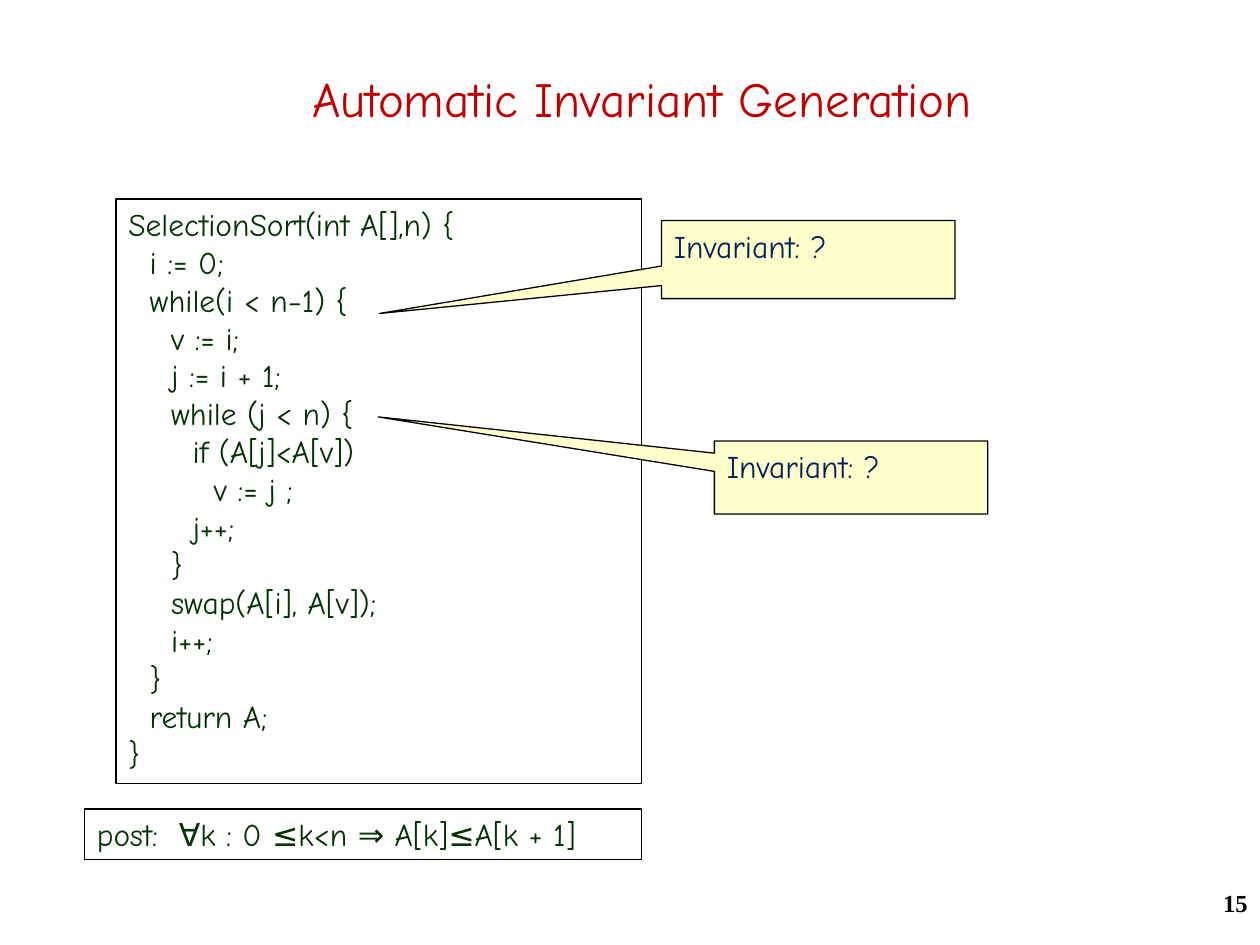
import pptx
import pptx.util
import pptx.dml.color
import pptx.enum.shapes
import pptx.enum.text

Inches = pptx.util.Inches
RGBColor = pptx.dml.color.RGBColor
SHAPE = pptx.enum.shapes.MSO_SHAPE
ALIGN = pptx.enum.text.PP_ALIGN
ANCHOR = pptx.enum.text.MSO_ANCHOR

RED = RGBColor(0xC0, 0x00, 0x00)
GREEN = RGBColor(0x00, 0x33, 0x00)
NAVY = RGBColor(0x00, 0x20, 0x60)
BLACK = RGBColor(0x00, 0x00, 0x00)
CREAM = RGBColor(0xFF, 0xFF, 0xCC)

INDENT = Inches(0.17)

deck = pptx.Presentation()
deck.slide_width, deck.slide_height = Inches(10), Inches(7.5)
page = deck.slides.add_slide(deck.slide_layouts[6])


def write(box, text, size, color, align=ALIGN.LEFT, anchor=ANCHOR.TOP,
          font="Comic Neue", bold=False):
    frame = box.text_frame
    frame.word_wrap = True
    frame.vertical_anchor = anchor
    frame.text = text
    for para in frame.paragraphs:
        para.alignment = align
        for span in para.runs:
            span.font.name = font
            span.font.size = pptx.util.Pt(size)
            span.font.bold = bold
            span.font.color.rgb = color


def add_outlined(kind, left, top, width, height, fill=None):
    box = page.shapes.add_shape(kind, Inches(left), Inches(top), Inches(width), Inches(height))
    box.shadow.inherit = False
    box.line.color.rgb = BLACK
    box.line.width = pptx.util.Pt(0.75)
    if fill is None:
        box.fill.background()
    else:
        box.fill.solid()
        box.fill.fore_color.rgb = fill
    return box


# Title
title = page.shapes.add_textbox(Inches(0.19), Inches(0.18), Inches(9.81), Inches(1.2))
write(title, "Automatic Invariant Generation", 28, RED, ALIGN.CENTER, ANCHOR.MIDDLE)

# Program listing: nesting depth and statement
code_lines = [
    (0, "SelectionSort(int A[],n) {"),
    (1, "i := 0;"),
    (1, "while(i < n−1) {"),
    (2, "v := i;"),
    (2, "j := i + 1;"),
    (2, "while (j < n) {"),
    (3, "if (A[j]<A[v])"),
    (4, "v := j ;"),
    (3, "j++;"),
    (2, "}"),
    (2, "swap(A[i], A[v]);"),
    (2, "i++;"),
    (1, "}"),
    (1, "return A;"),
    (0, "}"),
]
listing = add_outlined(SHAPE.RECTANGLE, 0.92, 1.58, 4.17, 4.64)
write(listing, "\n".join(line for depth, line in code_lines), 18, GREEN)
for para, (depth, line) in zip(listing.text_frame.paragraphs, code_lines):
    properties = para._p.get_or_add_pPr()
    properties.set("marL", str(depth * INDENT))
    properties.set("indent", "0")

# Postcondition
postcondition = add_outlined(SHAPE.RECTANGLE, 0.67, 6.42, 4.42, 0.4)
write(postcondition, "post:  ∀k : 0 ≤k<n ⇒ A[k]≤A[k + 1]", 18, GREEN)

# Callouts pointing at the two loop heads
callouts = [
    ((5.25, 1.75, 2.33, 0.62), (-1.46, 0.69)),
    ((5.67, 3.5, 2.17, 0.58), (-1.73, -0.83)),
]
for place, tip in callouts:
    callout = add_outlined(SHAPE.RECTANGULAR_CALLOUT, *place, fill=CREAM)
    callout.adjustments[0], callout.adjustments[1] = tip
    write(callout, "Invariant: ?", 18, NAVY)

# Slide number
number = page.shapes.add_textbox(Inches(7.92), Inches(7), Inches(2.08), Inches(0.5))
write(number, "15", 14, BLACK, ALIGN.RIGHT, font="Times New Roman", bold=True)

deck.save("out.pptx")
